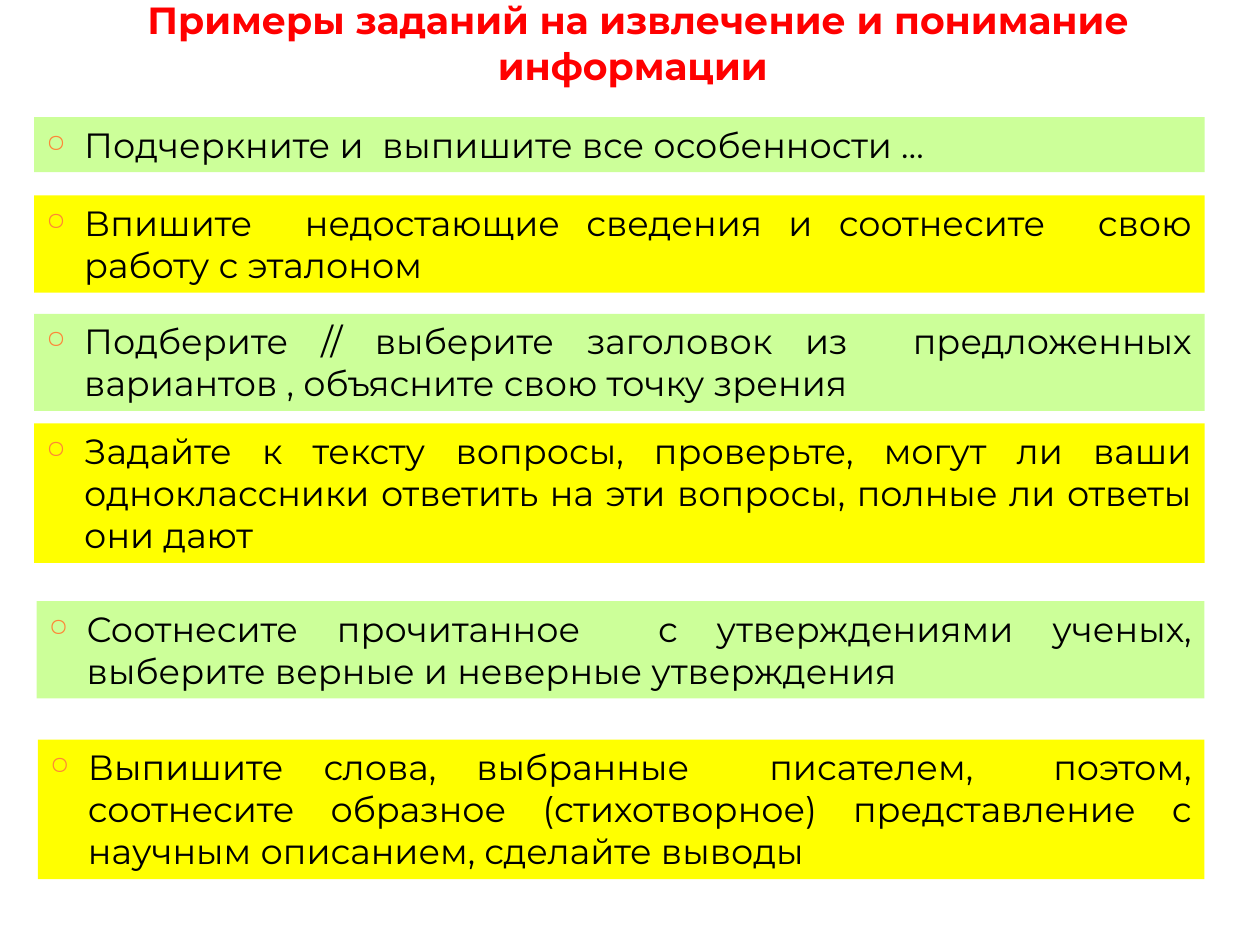
"""Build a slide of reading tasks as alternating coloured bands."""
from dataclasses import dataclass
from itertools import cycle

from lxml.etree import SubElement
from pptx import Presentation
from pptx.dml.color import RGBColor
from pptx.enum.shapes import MSO_SHAPE as Shape
from pptx.enum.text import MSO_ANCHOR as Anchor, PP_ALIGN as Align
from pptx.oxml.ns import qn
from pptx.util import Inches, Pt


@dataclass(frozen=True)
class Theme:
    font: str = "Montserrat"
    title_size: float = 21.6
    body_size: float = 20
    title: str = "FF0000"
    body: str = "000000"
    bullet: str = "FE8637"
    bands: tuple = ("CCFF99", "FFFF00")


class TaskSlide:
    COLUMNS, ROWS = 100, 75
    RIGHT_EDGE = 95.6
    PADDING, LINE = 1, 3.36
    INDENT = 3

    def __init__(self, presentation, theme):
        self.theme = theme
        self.column = presentation.slide_width / self.COLUMNS
        self.row = presentation.slide_height / self.ROWS
        self.slide = presentation.slides.add_slide(presentation.slide_layouts[6])

    def box(self, left, top, width, height):
        return (round(left * self.column), round(top * self.row),
                round(width * self.column), round(height * self.row))

    def label(self, shape, text, size, color, align, bold=False):
        frame = shape.text_frame
        frame.text = text
        frame.word_wrap = True
        frame.vertical_anchor = Anchor.MIDDLE if bold else Anchor.TOP
        paragraph = frame.paragraphs[0]
        paragraph.alignment = align
        font = paragraph.runs[0].font
        font.name, font.size, font.bold = self.theme.font, Pt(size), bold
        font.color.rgb = RGBColor.from_string(color)
        return paragraph

    def title(self, text, left, top, width, height):
        shape = self.slide.shapes.add_textbox(*self.box(left, top, width, height))
        self.label(shape, text, self.theme.title_size, self.theme.title,
                   Align.CENTER, bold=True)

    def bullet(self, paragraph):
        properties = paragraph._p.get_or_add_pPr()
        indent = round(self.INDENT * self.column)
        properties.set("marL", str(indent))
        properties.set("indent", str(-indent))
        color = SubElement(properties, qn("a:buClr"))
        SubElement(color, qn("a:srgbClr"), val=self.theme.bullet)
        SubElement(properties, qn("a:buSzPct"), val="70000")
        SubElement(properties, qn("a:buChar"), char="○")

    def band(self, text, left, top, lines, fill):
        height = self.PADDING + self.LINE * lines
        shape = self.slide.shapes.add_shape(
            Shape.RECTANGLE, *self.box(left, top, self.RIGHT_EDGE - left, height))
        shape.shadow.inherit = False
        shape.fill.solid()
        shape.fill.fore_color.rgb = RGBColor.from_string(fill)
        shape.line.fill.background()
        paragraph = self.label(shape, text, self.theme.body_size,
                               self.theme.body, Align.JUSTIFY)
        paragraph.space_before = Pt(6)
        self.bullet(paragraph)


TASKS = [
    (2.7, 9.3, 1, "Подчеркните и  выпишите все особенности …"),
    (2.7, 15.5, 2, "Впишите  недостающие сведения и соотнесите  свою работу с эталоном"),
    (2.7, 24.9, 2, "Подберите // выберите заголовок из  предложенных вариантов , "
                   "объясните свою точку зрения"),
    (2.7, 33.6, 3, "Задайте к тексту вопросы, проверьте, могут ли ваши одноклассники "
                   "ответить на эти вопросы, полные ли ответы они дают"),
    (2.9, 47.7, 2, "Соотнесите прочитанное  с утверждениями ученых, "
                   "выберите верные и неверные утверждения"),
    (3, 58.7, 3, "Выпишите слова, выбранные  писателем,  поэтом, соотнесите образное "
                 "(стихотворное) представление с научным описанием, сделайте выводы"),
]


def main():
    presentation = Presentation()
    presentation.slide_width, presentation.slide_height = Inches(10), Inches(7.5)
    theme = Theme()
    slide = TaskSlide(presentation, theme)
    slide.title("Примеры заданий на извлечение и понимание информации ",
                9.8, -0.9, 81.7, 8.5)
    for (left, top, lines, text), fill in zip(TASKS, cycle(theme.bands)):
        slide.band(text, left, top, lines, fill)
    presentation.save("out.pptx")


if __name__ == "__main__":
    main()
